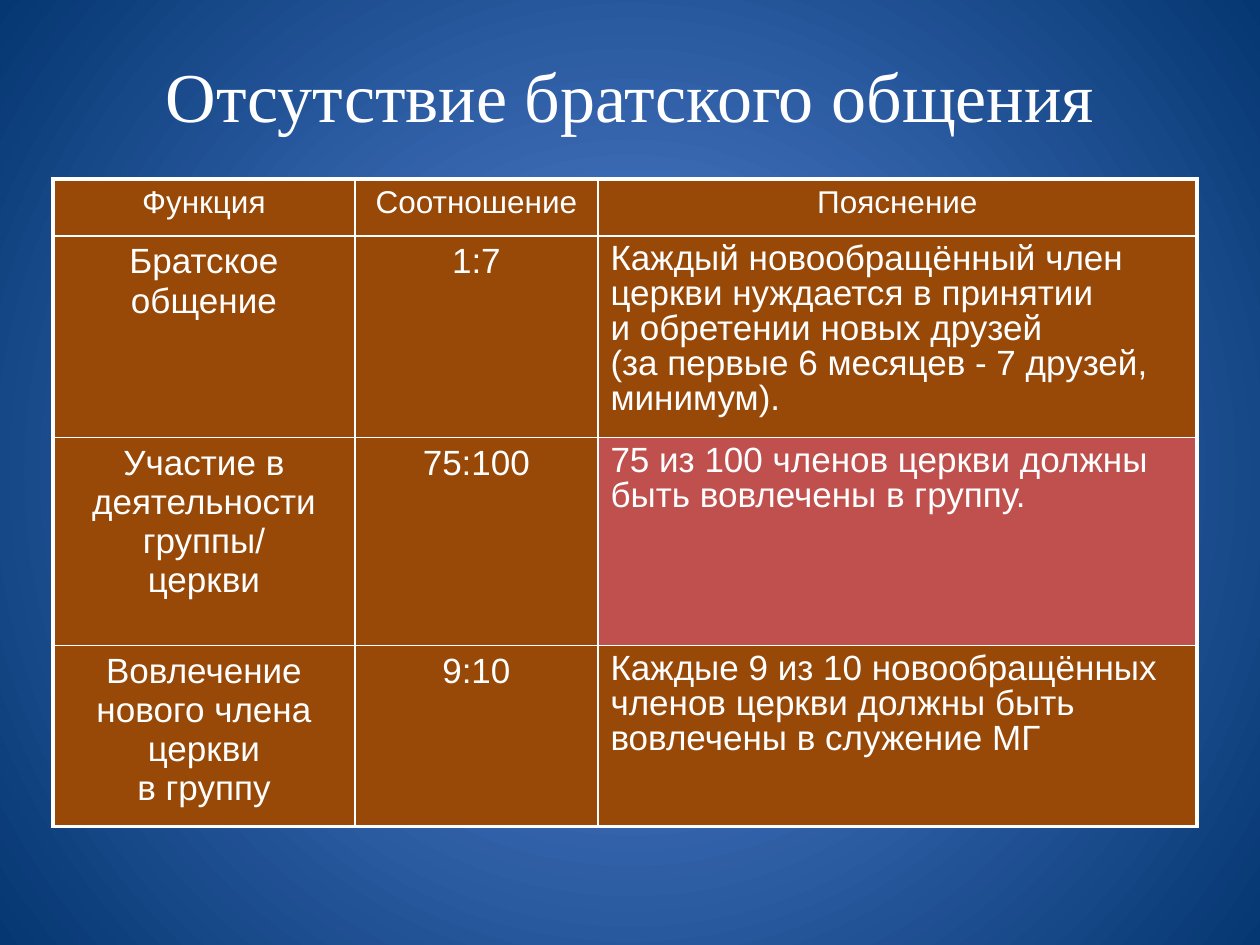
"""Build a slide with a table of church fellowship ratios."""
from lxml.etree import SubElement
from pptx import Presentation
from pptx.dml.color import RGBColor
from pptx.enum.text import MSO_ANCHOR as Anchor, PP_ALIGN as Align
from pptx.oxml import parse_xml
from pptx.oxml.ns import nsdecls, qn
from pptx.util import Emu, Pt

PX = 914400 // 126
COLORS = {
    "glow": "5A87DA",
    "navy": "053772",
    "white": "FFFFFF",
    "brown": "984807",
    "red": "C0504D",
}
COLUMN_WIDTHS = [302, 243, 599]
ROW_HEIGHTS = [57, 196, 208, 168]
ROWS = [
    ("Функция", "Соотношение", "Пояснение"),
    ("Братское общение", "1:7",
     "Каждый новообращённый член церкви нуждается в принятии\v"
     "и обретении новых друзей\v(за первые 6 месяцев - 7 друзей, минимум)."),
    ("Участие в деятельности группы/\vцеркви", "75:100",
     "75 из 100 членов церкви должны быть вовлечены в группу."),
    ("Вовлечение нового члена церкви\vв группу", "9:10",
     "Каждые 9 из 10 новообращённых членов церкви должны быть "
     "вовлечены в служение МГ"),
]


def px(*lengths):
    return [Emu(length * PX) for length in lengths]


def style(paragraph, font_name, size, align):
    paragraph.alignment = align
    paragraph.font.name = font_name
    paragraph.font.size = Pt(size)
    paragraph.font.color.rgb = RGBColor.from_string(COLORS["white"])


presentation = Presentation()
presentation.slide_width, presentation.slide_height = px(1260, 945)
slide = presentation.slides.add_slide(presentation.slide_layouts[6])

background = slide.background.fill
background.gradient()
for stop, position, color in zip(background.gradient_stops, (0, 1), ("glow", "navy")):
    stop.position = position
    stop.color.rgb = RGBColor.from_string(COLORS[color])
gradient = slide.element.find(".//" + qn("a:gradFill"))
gradient.replace(gradient.find(qn("a:lin")), parse_xml(
    f'<a:path {nsdecls("a")} path="circle">'
    '<a:fillToRect l="50000" t="50000" r="50000" b="50000"/></a:path>'))

title = slide.shapes.add_textbox(*px(68, 32, 1124, 126)).text_frame
title.word_wrap = True
title.vertical_anchor = Anchor.MIDDLE
title.text = "Отсутствие братского общения"
style(title.paragraphs[0], "Times New Roman", 40, Align.CENTER)

frame = slide.shapes.add_table(
    len(ROWS), len(COLUMN_WIDTHS),
    *px(53, 179, sum(COLUMN_WIDTHS), sum(ROW_HEIGHTS)))
table = frame.table
for column, width in zip(table.columns, px(*COLUMN_WIDTHS)):
    column.width = width
for row, height in zip(table.rows, px(*ROW_HEIGHTS)):
    row.height = height

last_row, last_column = len(ROWS) - 1, len(COLUMN_WIDTHS) - 1
for row_index, texts in enumerate(ROWS):
    for column_index, text in enumerate(texts):
        cell = table.cell(row_index, column_index)
        cell.text = text
        is_header = row_index == 0
        is_explanation = column_index == last_column and not is_header
        paragraph = cell.text_frame.paragraphs[0]
        style(paragraph, "Arial", 18 if is_header else 20,
              Align.LEFT if is_explanation else Align.CENTER)
        if is_explanation:
            paragraph.line_spacing = 0.9
        cell.fill.solid()
        fill_name = "red" if (row_index, column_index) == (2, 2) else "brown"
        cell.fill.fore_color.rgb = RGBColor.from_string(COLORS[fill_name])

        outer_sides = {
            "L": column_index == 0,
            "R": column_index == last_column,
            "T": row_index == 0,
            "B": row_index == last_row,
        }
        properties = cell._tc.get_or_add_tcPr()
        for order, (side, is_outer) in enumerate(outer_sides.items()):
            border = parse_xml(f'<a:ln{side} {nsdecls("a")}/>')
            border.set("w", str(Pt(2.25 if is_outer else 1)))
            line_fill = SubElement(border, qn("a:solidFill"))
            SubElement(line_fill, qn("a:srgbClr"), val=COLORS["white"])
            properties.insert(order, border)

presentation.save("out.pptx")
